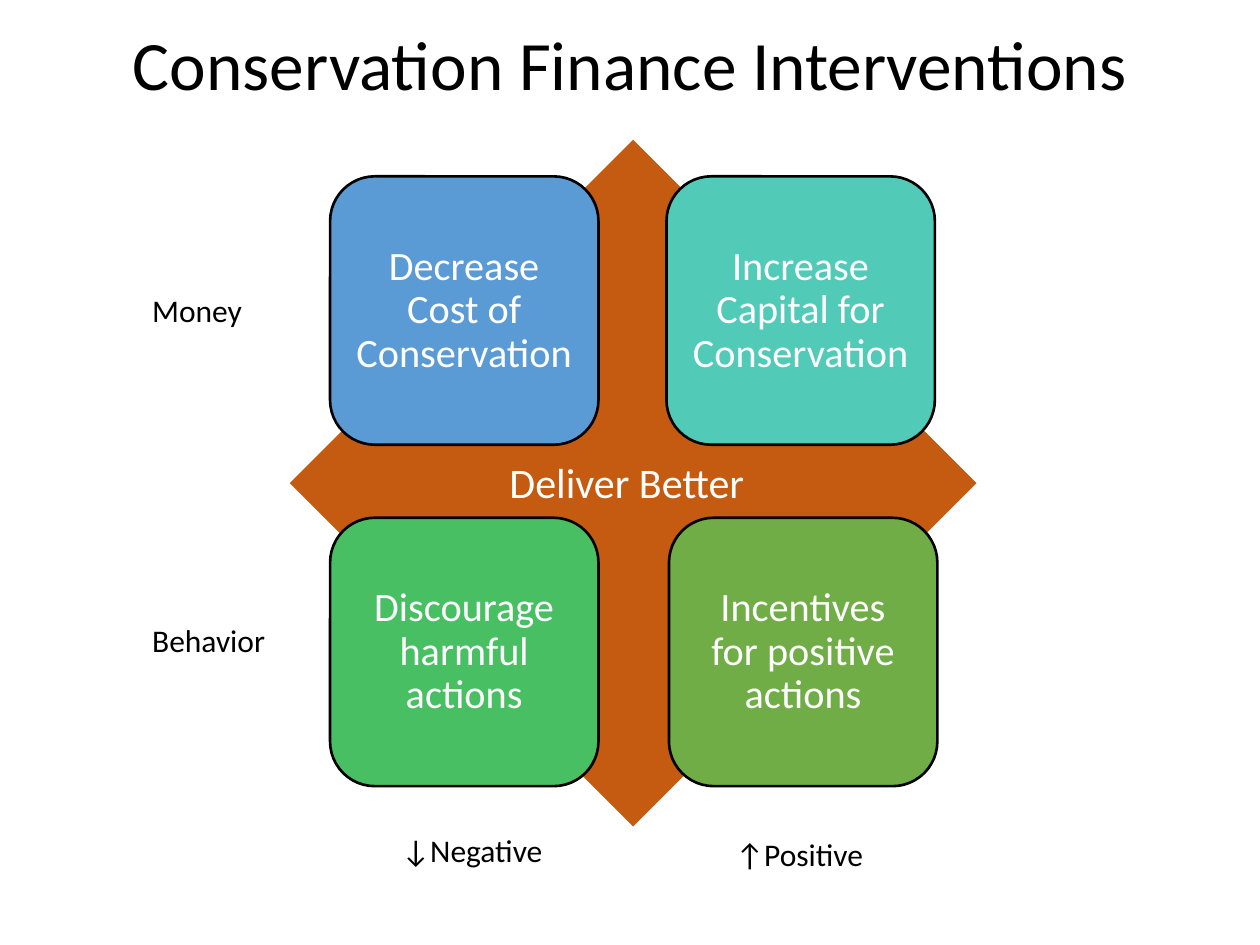
from pptx import Presentation
from pptx.dml.color import RGBColor
from pptx.enum.shapes import MSO_SHAPE
from pptx.enum.text import MSO_ANCHOR, PP_ALIGN
from pptx.util import Inches, Pt

DIAMOND, ROUNDED = MSO_SHAPE.DIAMOND, MSO_SHAPE.ROUNDED_RECTANGLE
MIDDLE, TOP = MSO_ANCHOR.MIDDLE, MSO_ANCHOR.TOP
CENTER, LEFT = PP_ALIGN.CENTER, PP_ALIGN.LEFT

BLACK = RGBColor(0x00, 0x00, 0x00)
WHITE = RGBColor(0xFF, 0xFF, 0xFF)
ORANGE = RGBColor(0xC5, 0x5A, 0x11)
BLUE = RGBColor(0x5B, 0x9B, 0xD5)
TEAL = RGBColor(0x52, 0xCA, 0xB8)
GREEN = RGBColor(0x49, 0xBF, 0x64)
OLIVE = RGBColor(0x70, 0xAD, 0x47)

TILE_SIZE = 2.13
TILES = [
    (0.32, 0.29, BLUE, "Decrease Cost of Conservation"),
    (2.99, 0.29, TEAL, "Increase Capital for Conservation"),
    (0.32, 3.0, GREEN, "Discourage harmful actions"),
    (3.01, 3.0, OLIVE, "Incentives for positive actions"),
]
AXIS_LABELS = [
    (1.11, 2.26, 0.93, "Money"),
    (1.11, 4.88, 1.14, "Behavior"),
    (3.09, 6.55, 1.56, "↓Negative"),
    (5.74, 6.58, 1.33, "↑Positive"),
]


def write_text(shape, text, size, color, align=CENTER, anchor=MIDDLE, spacing=1.0):
    frame = shape.text_frame
    frame.word_wrap = True
    frame.vertical_anchor = anchor
    paragraph = frame.paragraphs[0]
    paragraph.alignment = align
    paragraph.line_spacing = spacing
    run = paragraph.add_run()
    run.text = text
    run.font.name = "Calibri"
    run.font.size = Pt(size)
    run.font.color.rgb = color


def add_label(slide, left, top, width, height, text, size, color, **layout):
    box = slide.shapes.add_textbox(
        Inches(left), Inches(top), Inches(width), Inches(height))
    write_text(box, text, size, color, **layout)


def add_filled_shape(slide, kind, left, top, size, fill):
    shape = slide.shapes.add_shape(
        kind, Inches(left), Inches(top), Inches(size), Inches(size))
    shape.shadow.inherit = False
    shape.fill.solid()
    shape.fill.fore_color.rgb = fill
    shape.line.fill.background()
    return shape


def add_tile(slide, left, top, fill, text):
    tile = add_filled_shape(slide, ROUNDED, left, top, TILE_SIZE, fill)
    tile.line.color.rgb = BLACK
    tile.line.width = Pt(1.5)
    frame = tile.text_frame
    frame.margin_left = frame.margin_right = Inches(0.1)
    frame.margin_top = frame.margin_bottom = Inches(0.1)
    write_text(tile, text, 23, WHITE, spacing=0.9)


def add_matrix(slide, left, top, size):
    add_filled_shape(slide, DIAMOND, left, top, size, ORANGE)
    for offset_x, offset_y, fill, text in TILES:
        add_tile(slide, left + offset_x, top + offset_y, fill, text)
    add_label(slide, left - 0.05, top - 0.01, size, size,
              "Deliver Better", 24, WHITE)


def add_axis_labels(slide):
    for left, top, width, text in AXIS_LABELS:
        add_label(slide, left, top, width, 0.4, text, 18, BLACK,
                  align=LEFT, anchor=TOP)


def main():
    presentation = Presentation()
    presentation.slide_width = Inches(10)
    presentation.slide_height = Inches(7.5)
    slide = presentation.slides.add_slide(presentation.slide_layouts[6])
    add_label(slide, 0.69, 0.09, 8.62, 0.9,
              "Conservation Finance Interventions", 39.6, BLACK, spacing=0.9)
    add_matrix(slide, 2.3, 1.11, 5.45)
    add_axis_labels(slide)
    presentation.save("out.pptx")


if __name__ == "__main__":
    main()
